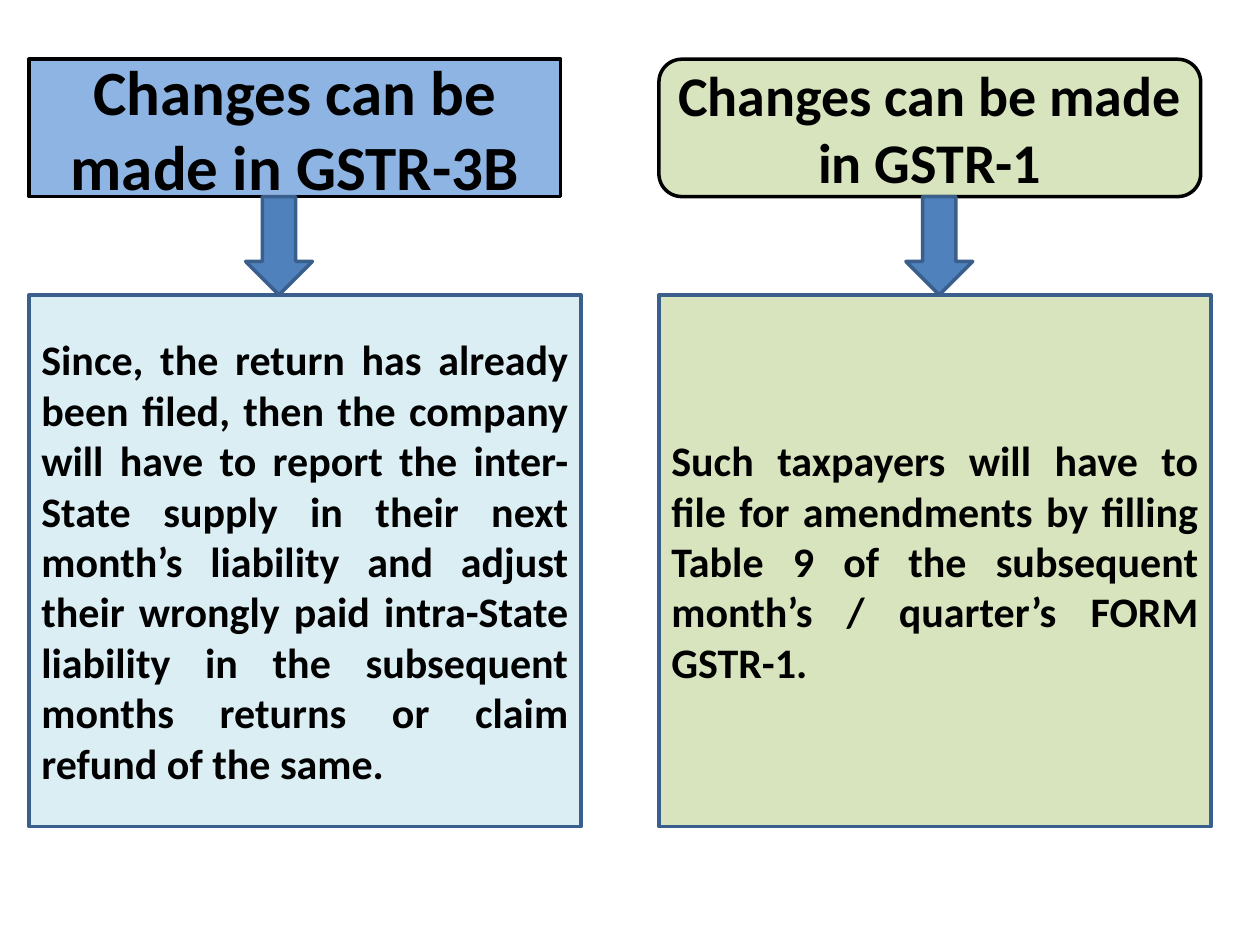
from pptx import Presentation
from pptx.dml.color import RGBColor
from pptx.enum.shapes import MSO_SHAPE
from pptx.enum.text import MSO_ANCHOR, MSO_AUTO_SIZE, PP_ALIGN
from pptx.util import Pt

COLUMNS = [
    {
        "title": "Changes can be made in GSTR-3B",
        "body": "Since, the return has already been filed, then the company will have to "
                "report the inter- State supply in their next month’s liability and adjust "
                "their wrongly paid intra-State liability in the subsequent months returns "
                "or claim refund of the same.",
        "left": 16.56, "title_width": 303.84, "arrow_left": 140.4,
        "title_fill": "8EB4E3", "body_fill": "DBEEF4", "title_size": 36,
    },
    {
        "title": "Changes can be made in GSTR-1",
        "body": "Such taxpayers will have to file for amendments by filling Table 9 of the "
                "subsequent month’s / quarter’s FORM GSTR-1.",
        "left": 376.56, "title_width": 309.6, "arrow_left": 517.68,
        "title_fill": "D7E4BD", "body_fill": "D7E4BD", "title_size": 32,
    },
]

THEME = {
    "font": "Calibri", "text": "000000", "body_size": 24,
    "title_line": "000000", "line": "3A5F8C", "arrow": "4F81BD", "line_width": 2,
}

TITLE_TOP, TITLE_HEIGHT = 33.84, 78.48
ARROW_WIDTH, ARROW_HEIGHT = 38.16, 56.16
BODY_WIDTH, BODY_HEIGHT = 315.36, 303.84
ARROW_TOP = TITLE_TOP + TITLE_HEIGHT
BODY_TOP = ARROW_TOP + ARROW_HEIGHT


def style_shape(sp, fill, line):
    sp.shadow.inherit = False
    sp.fill.solid()
    sp.fill.fore_color.rgb = RGBColor.from_string(fill)
    sp.line.color.rgb = RGBColor.from_string(line)
    sp.line.width = Pt(THEME["line_width"])


def add_shape(slide, kind, box, fill, line):
    sp = slide.shapes.add_shape(kind, *map(Pt, box))
    style_shape(sp, fill, line)
    return sp


def write_text(sp, text, size, align):
    tf = sp.text_frame
    tf.word_wrap = True
    tf.auto_size = MSO_AUTO_SIZE.NONE
    tf.vertical_anchor = MSO_ANCHOR.MIDDLE
    p = tf.paragraphs[0]
    p.alignment = align
    p.space_before = Pt(0)
    r = p.add_run()
    r.text = text
    r.font.name = THEME["font"]
    r.font.size = Pt(size)
    r.font.bold = True
    r.font.color.rgb = RGBColor.from_string(THEME["text"])


def add_column(slide, column, is_title):
    box = (column["left"], TITLE_TOP, column["title_width"], TITLE_HEIGHT)
    if is_title:
        header = slide.shapes.title
        header.left, header.top, header.width, header.height = map(Pt, box)
        fill = column["title_fill"]
        header.fill.solid()
        header.fill.fore_color.rgb = RGBColor.from_string(fill)
        header.line.color.rgb = RGBColor.from_string(THEME["title_line"])
        header.line.width = Pt(THEME["line_width"])
    else:
        header = add_shape(slide, MSO_SHAPE.ROUNDED_RECTANGLE, box,
                           column["title_fill"], THEME["title_line"])
    write_text(header, column["title"], column["title_size"], PP_ALIGN.CENTER)

    add_shape(slide, MSO_SHAPE.DOWN_ARROW,
              (column["arrow_left"], ARROW_TOP, ARROW_WIDTH, ARROW_HEIGHT),
              THEME["arrow"], THEME["line"])
    body = add_shape(slide, MSO_SHAPE.RECTANGLE,
                     (column["left"], BODY_TOP, BODY_WIDTH, BODY_HEIGHT),
                     column["body_fill"], THEME["line"])
    write_text(body, column["body"], THEME["body_size"], PP_ALIGN.JUSTIFY)


def main():
    prs = Presentation()
    prs.slide_width, prs.slide_height = Pt(720), Pt(540)
    slide = prs.slides.add_slide(prs.slide_layouts[5])
    for i, column in enumerate(COLUMNS):
        add_column(slide, column, is_title=i == 0)
    prs.save("out.pptx")


if __name__ == "__main__":
    main()
